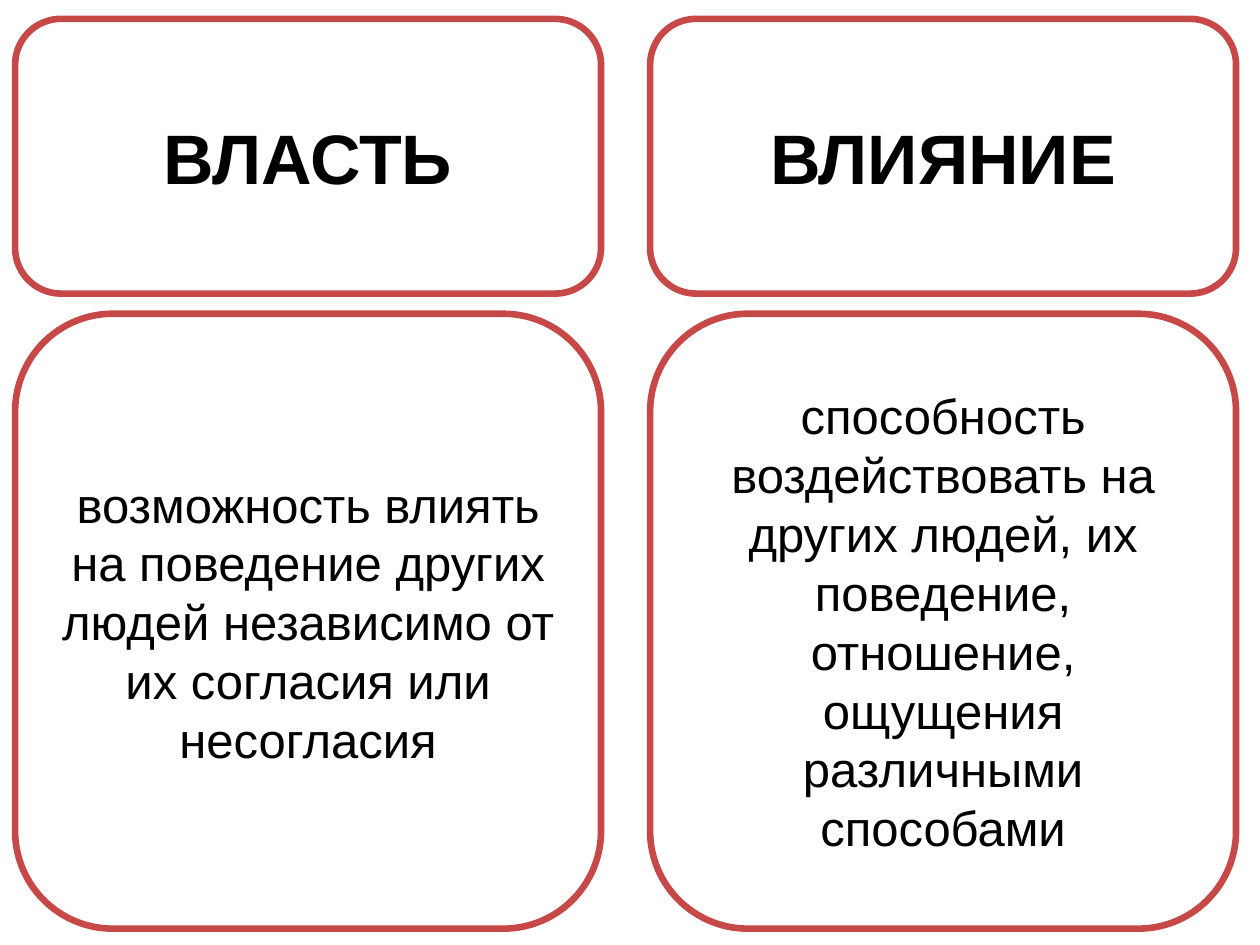
from dataclasses import dataclass

from pptx import Presentation
from pptx.dml.color import RGBColor
from pptx.enum.shapes import MSO_SHAPE
from pptx.enum.text import MSO_ANCHOR, PP_ALIGN
from pptx.slide import Slide
from pptx.util import Inches, Pt

ROUNDED_RECTANGLE = MSO_SHAPE.ROUNDED_RECTANGLE
MIDDLE = MSO_ANCHOR.MIDDLE
CENTER = PP_ALIGN.CENTER

COLORS = {"fill": "FFFFFF", "border": "C64847", "text": "000000"}
FONT = "Arial"
BORDER_WIDTH = 3.78

COLUMN_LEFT = 0.12
COLUMN_STEP = 5.04
CARD_WIDTH = 4.65
TERM_TOP, TERM_HEIGHT = 0.15, 2.18
DEFINITION_TOP, DEFINITION_HEIGHT = 2.49, 4.88


@dataclass
class Concept:
    term: str
    definition: str


CONCEPTS = [
    Concept(
        "ВЛАСТЬ",
        "возможность влиять на поведение других людей "
        "независимо от их согласия или несогласия",
    ),
    Concept(
        "ВЛИЯНИЕ",
        "способность воздействовать на других людей, их поведение, "
        "отношение, ощущения различными способами",
    ),
]


def color(name: str) -> RGBColor:
    return RGBColor.from_string(COLORS[name])


def add_card(
    slide: Slide,
    text: str,
    *,
    left: float,
    top: float,
    height: float,
    size: int,
    bold: bool = False,
) -> None:
    shape = slide.shapes.add_shape(
        ROUNDED_RECTANGLE,
        Inches(left), Inches(top), Inches(CARD_WIDTH), Inches(height),
    )
    shape.shadow.inherit = False
    shape.fill.solid()
    shape.fill.fore_color.rgb = color("fill")
    shape.line.color.rgb = color("border")
    shape.line.width = Pt(BORDER_WIDTH)
    frame = shape.text_frame
    frame.word_wrap = True
    frame.vertical_anchor = MIDDLE
    paragraph = frame.paragraphs[0]
    paragraph.alignment = CENTER
    run = paragraph.add_run()
    run.text = text
    run.font.name = FONT
    run.font.size = Pt(size)
    run.font.bold = bold
    run.font.color.rgb = color("text")


def main() -> None:
    presentation = Presentation()
    presentation.slide_width = Inches(10)
    presentation.slide_height = Inches(7.5)
    slide = presentation.slides.add_slide(presentation.slide_layouts[6])
    for column, concept in enumerate(CONCEPTS):
        left = COLUMN_LEFT + column * COLUMN_STEP
        add_card(slide, concept.term, left=left, top=TERM_TOP,
                 height=TERM_HEIGHT, size=40, bold=True)
        add_card(slide, concept.definition, left=left, top=DEFINITION_TOP,
                 height=DEFINITION_HEIGHT, size=28)
    presentation.save("out.pptx")


if __name__ == "__main__":
    main()
